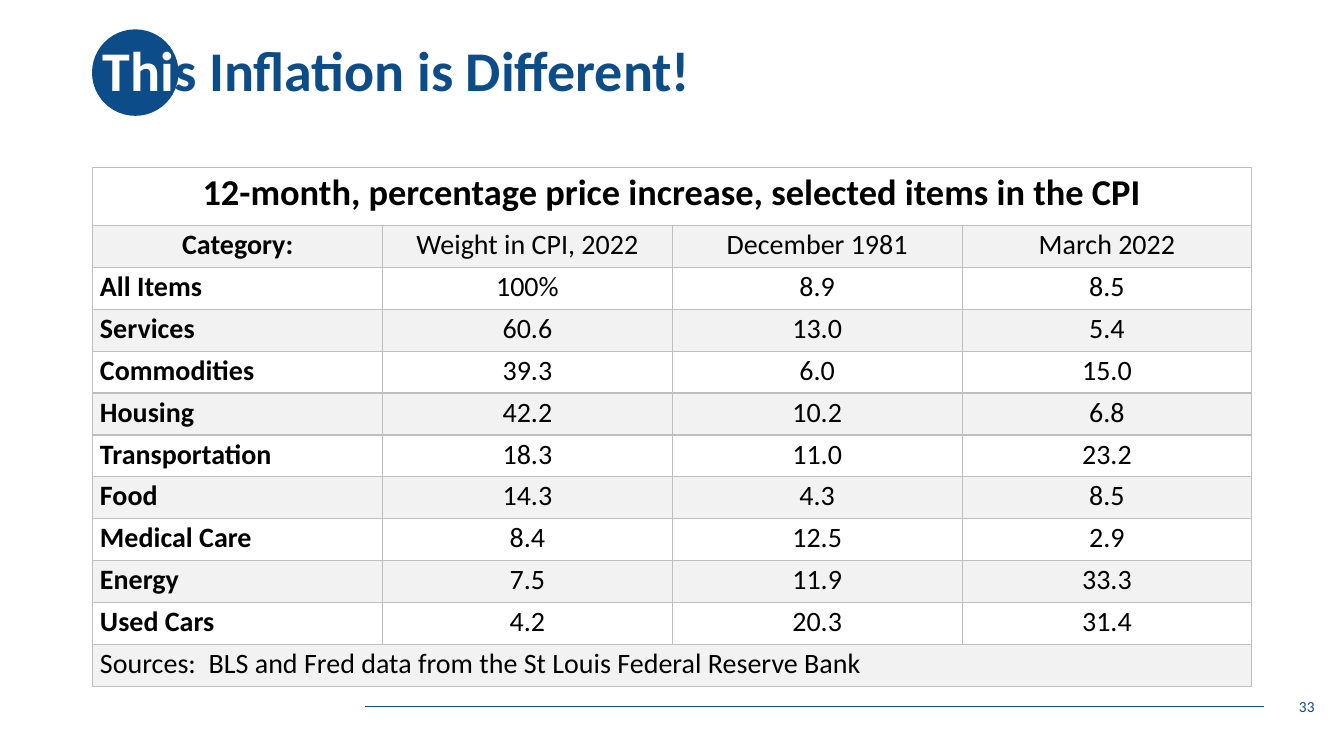
import dataclasses

import lxml.etree
import pptx
import pptx.dml.color
import pptx.enum.shapes
import pptx.enum.text
import pptx.oxml.ns
import pptx.util

Cm = pptx.util.Cm
Pt = pptx.util.Pt
ALIGN = pptx.enum.text.PP_ALIGN
MIDDLE = pptx.enum.text.MSO_ANCHOR.MIDDLE


@dataclasses.dataclass(frozen=True)
class Theme:
    """Colours, font and type sizes."""
    font: str = "Calibri"
    navy: str = "0C4C88"
    white: str = "FFFFFF"
    black: str = "000000"
    band: str = "F2F2F2"
    rule: str = "BFBFBF"
    title: int = 40
    head: int = 26
    body: int = 20
    page: int = 11


def color(code):
    """Turn a hex code into a colour."""
    return pptx.dml.color.RGBColor.from_string(code)


def write(para, text, *, font, size, tint, bold=False, align=ALIGN.LEFT, space=None):
    """Add one run of text to a paragraph."""
    para.alignment = align
    para.line_spacing = space
    run = para.add_run()
    run.text = text
    run.font.name = font
    run.font.size = Pt(size)
    run.font.bold = bold
    run.font.color.rgb = color(tint)


class Deck:
    """Holds the style and the current slide."""

    def __init__(self, show, theme):
        """Add a blank slide."""
        self.theme = theme
        self.slide = show.slides.add_slide(show.slide_layouts[6])

    def line(self, left, right, top):
        """Draw a thin level line."""
        line = self.slide.shapes.add_connector(
            pptx.enum.shapes.MSO_CONNECTOR.STRAIGHT, Cm(left), Cm(top), Cm(right), Cm(top))
        line.line.color.rgb = color(self.theme.navy)
        line.line.width = Pt(0.5)
        lxml.etree.SubElement(line._element.spPr, pptx.oxml.ns.qn("a:effectLst"))

    def disc(self, left, top, size):
        """Draw a filled circle."""
        disc = self.slide.shapes.add_shape(
            pptx.enum.shapes.MSO_SHAPE.OVAL, Cm(left), Cm(top), Cm(size), Cm(size))
        disc.shadow.inherit = False
        disc.fill.solid()
        disc.fill.fore_color.rgb = color(self.theme.navy)
        disc.line.fill.background()

    def label(self, box, parts, **form):
        """Add a text box from pairs of text and colour."""
        frame = self.slide.shapes.add_textbox(*map(Cm, box)).text_frame
        frame.word_wrap = True
        frame.vertical_anchor = MIDDLE
        for text, tint in parts:
            write(frame.paragraphs[0], text, font=self.theme.font, tint=tint, **form)

    def cell(self, cell, fill):
        """Set the margins, borders and fill of a cell."""
        cell.margin_left = cell.margin_right = Cm(0.18)
        cell.margin_top = cell.margin_bottom = 0
        props = cell._tc.get_or_add_tcPr()
        qn = pptx.oxml.ns.qn
        for side in "LRTB":
            edge = lxml.etree.SubElement(props, qn(f"a:ln{side}"), w=str(Pt(1)))
            solid = lxml.etree.SubElement(edge, qn("a:solidFill"))
            lxml.etree.SubElement(solid, qn("a:srgbClr"), val=self.theme.rule)
        cell.fill.solid()
        cell.fill.fore_color.rgb = color(fill)

    def table(self, box, rows, first):
        """Add a banded table whose one-item rows span its width."""
        theme = self.theme
        count = max(map(len, rows))
        grid = self.slide.shapes.add_table(len(rows), count, *map(Cm, box)).table
        grid.first_row = grid.horz_banding = False
        step = (box[3] - first) / (len(rows) - 1)
        for r, row in enumerate(rows):
            grid.rows[r].height = Cm(step if r else first)
            for c in range(count):
                self.cell(grid.cell(r, c), theme.band if r % 2 else theme.white)
            if len(row) == 1:
                grid.cell(r, 0).merge(grid.cell(r, count - 1))
            for c, text in enumerate(row):
                left = c == 0 and r > 1
                write(grid.cell(r, c).text_frame.paragraphs[0], text, font=theme.font,
                      size=theme.body if r else theme.head, tint=theme.black,
                      bold=c == 0 and r < len(rows) - 1,
                      align=ALIGN.LEFT if left else ALIGN.CENTER, space=1.07)


ROWS = [
    ["12-month, percentage price increase, selected items in the CPI"],
    ["Category:", "Weight in CPI, 2022", "December 1981", "March 2022"],
    ["All Items", "100%", "8.9", "8.5"],
    ["Services", "60.6", "13.0", "5.4"],
    ["Commodities", "39.3", "6.0", "15.0"],
    ["Housing", "42.2", "10.2", "6.8"],
    ["Transportation", "18.3", "11.0", "23.2"],
    ["Food", "14.3", "4.3", "8.5"],
    ["Medical Care", "8.4", "12.5", "2.9"],
    ["Energy", "7.5", "11.9", "33.3"],
    ["Used Cars", "4.2", "20.3", "31.4"],
    ["Sources:  BLS and Fred data from the St Louis Federal Reserve Bank"],
]


def main():
    """Build and save the slide."""
    show = pptx.Presentation()
    show.slide_width, show.slide_height = Cm(33.87), Cm(19.05)
    theme = Theme()
    deck = Deck(show, theme)
    deck.line(9.19, 31.85, 17.81)
    deck.disc(2.32, 0.74, 2.18)
    deck.label((2.34, 0, 29.21, 3.68),
               [("Thi", theme.white), ("s Inflation is Different!", theme.navy)],
               size=theme.title, bold=True, space=0.9)
    deck.table((2.34, 4.22, 29.21, 13.08), ROWS, 1.46)
    deck.label((25.76, 17.3, 7.62, 1.02), [("33", theme.navy)],
               size=theme.page, align=ALIGN.RIGHT)
    show.save("out.pptx")


if __name__ == "__main__":
    main()
